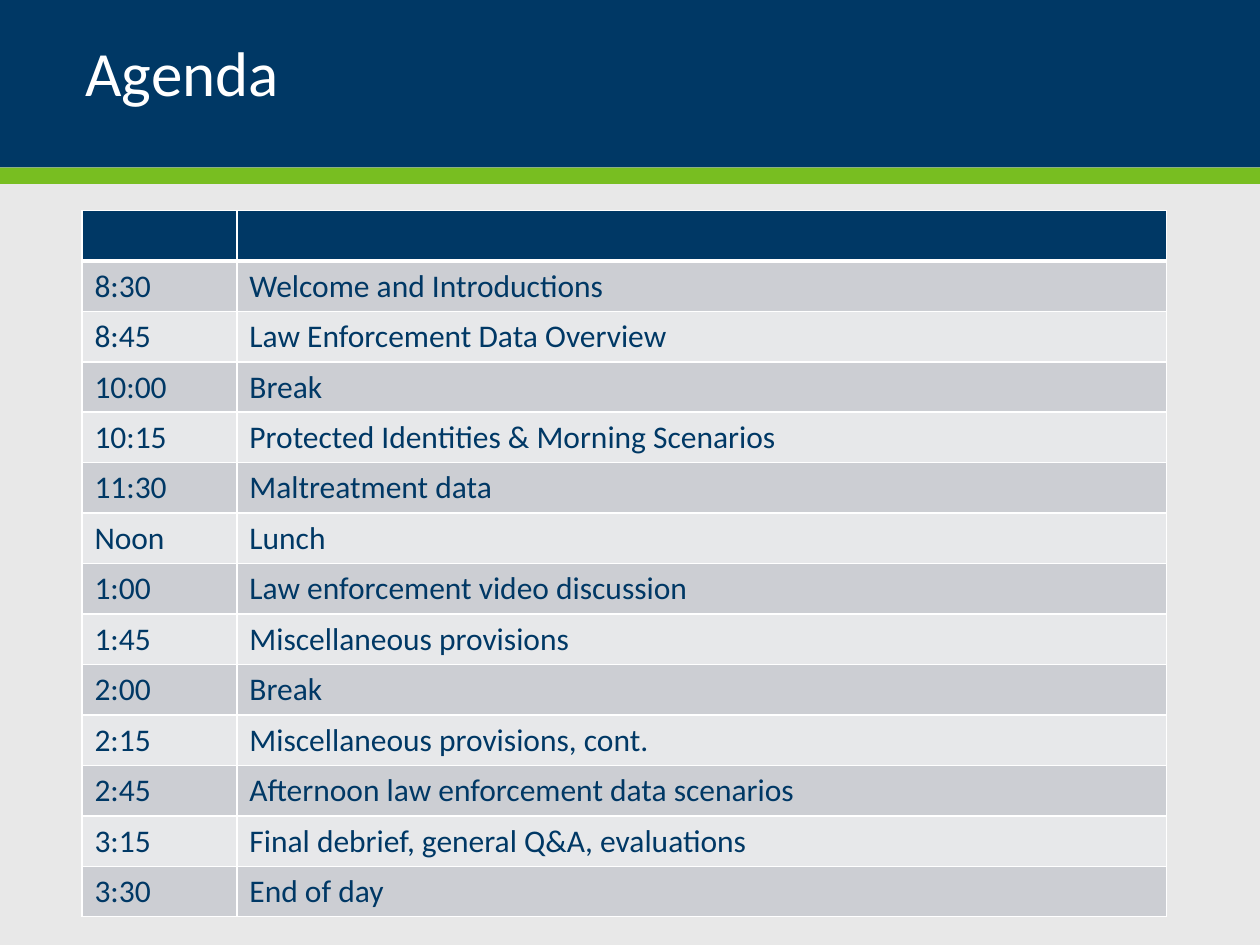
from dataclasses import dataclass

from lxml import etree
from pptx import Presentation
from pptx import util as u
from pptx.dml.color import RGBColor
from pptx.enum import shapes, text
from pptx.oxml import ns


@dataclass(frozen=True)
class Theme:
    font: str = "Calibri"
    navy: str = "003865"
    green: str = "78BE21"
    white: str = "FFFFFF"
    background: str = "E8E8E8"
    bands: tuple = ("CCCED3", "E7E8EA")
    title_size: int = 36
    body_size: int = 18


THEME = Theme()

AGENDA = [
    ("8:30", "Welcome and Introductions"),
    ("8:45", "Law Enforcement Data Overview"),
    ("10:00", "Break"),
    ("10:15", "Protected Identities & Morning Scenarios"),
    ("11:30", "Maltreatment data"),
    ("Noon", "Lunch"),
    ("1:00", "Law enforcement video discussion"),
    ("1:45", "Miscellaneous provisions"),
    ("2:00", "Break"),
    ("2:15", "Miscellaneous provisions, cont."),
    ("2:45", "Afternoon law enforcement data scenarios"),
    ("3:15", "Final debrief, general Q&A, evaluations"),
    ("3:30", "End of day"),
]


def paint(fill, color):
    fill.solid()
    fill.fore_color.rgb = RGBColor.from_string(color)


def style_paragraph(para, size, color):
    para.font.name = THEME.font
    para.font.size = u.Pt(size)
    para.font.color.rgb = RGBColor.from_string(color)


def add_band(page, top, height, color):
    band = page.shapes.add_shape(
        shapes.MSO_SHAPE.RECTANGLE, 0, u.Inches(top), u.Inches(10), u.Inches(height))
    band.shadow.inherit = False
    paint(band.fill, color)
    band.line.fill.background()


def add_title(page, words):
    box = page.shapes.add_textbox(
        u.Inches(0.58), u.Inches(0.14), u.Inches(8.75), u.Inches(0.92))
    frame = box.text_frame
    frame.word_wrap = True
    frame.vertical_anchor = text.MSO_ANCHOR.MIDDLE
    para = frame.paragraphs[0]
    para.text = words
    para.line_spacing = 0.9
    style_paragraph(para, THEME.title_size, THEME.white)


def add_borders(cell, top=1, bottom=1):
    properties = cell._tc.get_or_add_tcPr()
    for side, width in (("L", 1), ("R", 1), ("T", top), ("B", bottom)):
        line = etree.SubElement(properties, ns.qn(f"a:ln{side}"), w=str(u.Pt(width)))
        solid = etree.SubElement(line, ns.qn("a:solidFill"))
        etree.SubElement(solid, ns.qn("a:srgbClr"), val=THEME.white)


def style_cell(cell, words, fill, top=1, bottom=1):
    # Borders must precede the fill in the cell properties
    add_borders(cell, top, bottom)
    paint(cell.fill, fill)
    para = cell.text_frame.paragraphs[0]
    if words:
        para.text = words
    style_paragraph(para, THEME.body_size, THEME.navy)


def add_agenda(page, entries):
    row_height = u.Inches(0.39)
    count = len(entries) + 1
    table = page.shapes.add_table(
        count, 2, u.Inches(0.65), u.Inches(1.67), u.Inches(8.61), row_height * count).table
    for column, width in zip(table.columns, (1.23, 7.38)):
        column.width = u.Inches(width)
    for row in table.rows:
        row.height = row_height

    # Empty header row with a heavier rule below it
    for cell in table.rows[0].cells:
        style_cell(cell, "", THEME.navy, bottom=3)

    # Banded schedule rows
    for index, entry in enumerate(entries):
        for cell, words in zip(table.rows[index + 1].cells, entry):
            style_cell(cell, words, THEME.bands[index % 2], top=1 if index else 3)


def main():
    deck = Presentation()
    deck.slide_width, deck.slide_height = u.Inches(10), u.Inches(7.5)
    page = deck.slides.add_slide(deck.slide_layouts[6])
    paint(page.background.fill, THEME.background)

    # Title banner
    add_band(page, 0, 1.33, THEME.navy)
    add_band(page, 1.33, 0.13, THEME.green)
    add_title(page, "Agenda")

    # Schedule
    add_agenda(page, AGENDA)
    deck.save("out.pptx")


if __name__ == "__main__":
    main()
